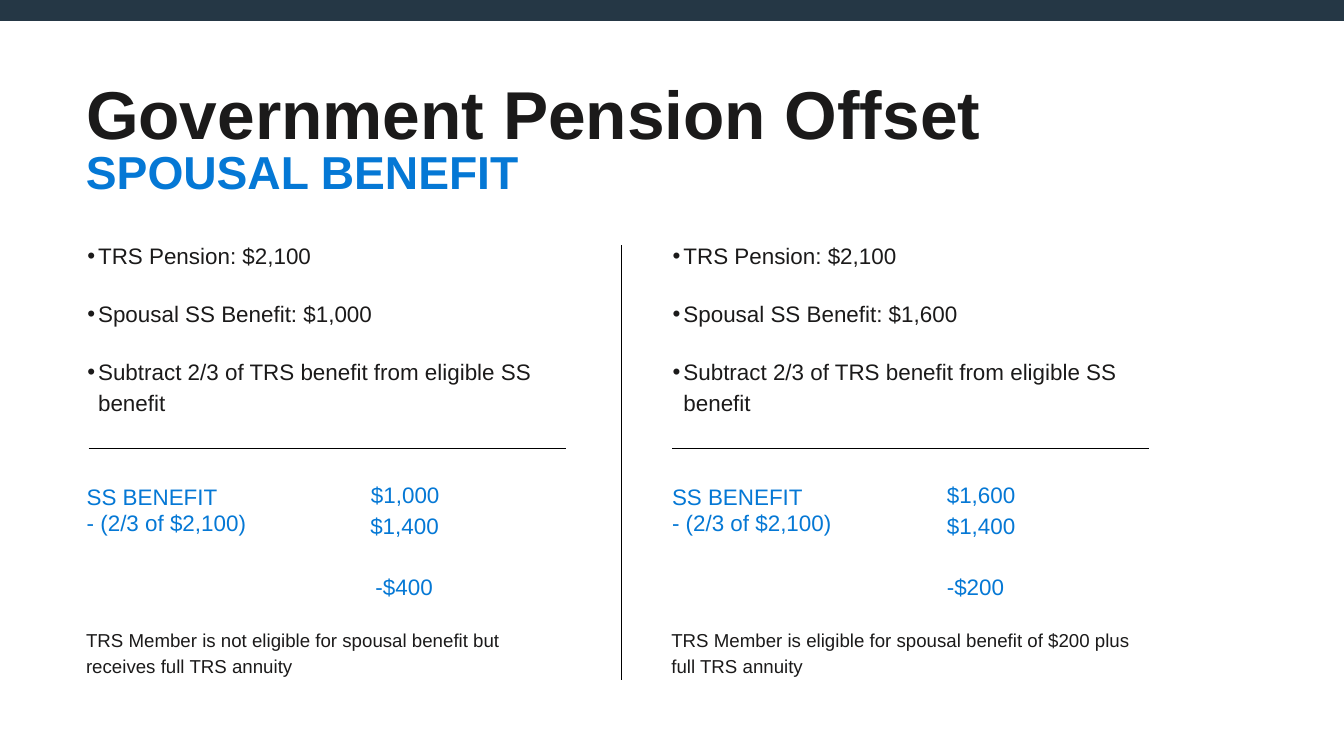
from dataclasses import dataclass
from typing import NamedTuple

from lxml import etree
from pptx import Presentation
from pptx import util as u
from pptx.dml.color import RGBColor
from pptx.enum import shapes, text
from pptx.oxml.ns import qn

EMU_PER_PX = 9144  # 100 px to the inch


def px(length: int) -> u.Emu:
    return u.Emu(length * EMU_PER_PX)


@dataclass(frozen=True)
class Theme:
    font: str = "Arial"
    ink: RGBColor = RGBColor(0x1B, 0x1A, 0x1A)
    accent: RGBColor = RGBColor(0x05, 0x78, 0xD5)
    rule: RGBColor = RGBColor(0, 0, 0)
    bar: RGBColor = RGBColor(0x25, 0x37, 0x45)
    title: float = 72.5
    subtitle: float = 49.5
    body: float = 24
    note: float = 20


class Box(NamedTuple):
    left: int
    top: int
    width: int
    height: int


class Amount(NamedTuple):
    text: str
    right_margin: int
    top_margin: int
    spacing: float


@dataclass(frozen=True)
class Case:
    left: int
    rule_left: int
    benefit: str
    result: str
    note: str
    note_width: int
    amounts_right: bool


THEME = Theme()
CASES = [
    Case(128, 132, "$1,000", "-$400",
         "TRS Member is not eligible for spousal benefit but receives full TRS annuity",
         692, True),
    Case(999, 1000, "$1,600", "-$200",
         "TRS Member is eligible for spousal benefit of $200 plus full TRS annuity",
         702, False),
]


def format_paragraph(paragraph, size: float, color: RGBColor, bold: bool = False,
                     spacing: float = 1.0, before: float = 0) -> None:
    paragraph.alignment = text.PP_ALIGN.LEFT
    paragraph.line_spacing = spacing
    paragraph.space_before = u.Pt(before)
    for run in paragraph.runs:
        run.font.name = THEME.font
        run.font.size = u.Pt(size)
        run.font.bold = bold
        run.font.color.rgb = color


def place_text(shape, box: Box, content: str, top_margin: int = 1):
    """Move a text shape, clear its insets and return its text frame."""
    shape.left, shape.top, shape.width, shape.height = map(px, box)
    frame = shape.text_frame
    frame.text = content
    frame.word_wrap = True
    frame.auto_size = text.MSO_AUTO_SIZE.NONE
    frame.vertical_anchor = text.MSO_ANCHOR.TOP
    frame.margin_left = frame.margin_right = frame.margin_bottom = 0
    frame.margin_top = px(top_margin)
    return frame


def add_label(slide, box: Box, content: str, size: float, color: RGBColor,
              bold: bool = False, spacing: float = 1.0) -> None:
    shape = slide.shapes.add_textbox(*map(px, box))
    frame = place_text(shape, box, content)
    format_paragraph(frame.paragraphs[0], size, color, bold, spacing)


def add_rule(slide, x1: int, y1: int, x2: int, y2: int) -> None:
    line = slide.shapes.add_connector(shapes.MSO_CONNECTOR.STRAIGHT,
                                      *map(px, (x1, y1, x2, y2)))
    line.line.color.rgb = THEME.rule
    line.line.width = u.Pt(0.75)
    etree.SubElement(line._element.spPr, qn("a:effectLst"))


def fill_bullets(placeholder, case: Case) -> None:
    items = ["TRS Pension: $2,100", f"Spousal SS Benefit: {case.benefit}",
             "Subtract 2/3 of TRS benefit from eligible SS benefit"]
    frame = place_text(placeholder, Box(case.left, 359, 705, 259), "\n".join(items))
    layout = [(1.0, 0), (1.0, 33.5), (1.15, 29.5)]
    for paragraph, (spacing, before) in zip(frame.paragraphs, layout):
        format_paragraph(paragraph, THEME.body, THEME.ink, spacing=spacing, before=before)
        properties = paragraph._p.get_or_add_pPr()
        properties.set("marL", str(px(18)))
        properties.set("indent", str(-px(16)))
        etree.SubElement(properties, qn("a:buChar")).set("char", "•")


def fill_cell(cell, content: str, spacing: float, left: int = 0, right: int = 0,
              top: int = 0) -> None:
    cell.text = content
    cell.margin_left, cell.margin_right = px(left), px(right)
    cell.margin_top, cell.margin_bottom = px(top), 0
    format_paragraph(cell.text_frame.paragraphs[0], THEME.body, THEME.accent,
                     spacing=spacing)


def add_calculation(slide, case: Case) -> None:
    columns, rows = (347, 184), (41, 69, 61)
    table = slide.shapes.add_table(3, 2, px(case.left - 2), px(719),
                                   px(sum(columns)), px(sum(rows))).table
    table.first_row = table.horz_banding = False
    for column, width in zip(table.columns, columns):
        column.width = px(width)
    for row, height in zip(table.rows, rows):
        row.height = px(height)
    for cell in table.iter_cells():
        cell.fill.background()

    fill_cell(table.cell(0, 0), "SS BENEFIT", 1.1, left=3)
    fill_cell(table.cell(1, 0), "- (2/3 of $2,100)", 1.0, left=3, top=1)
    amounts = [Amount(case.benefit, 3, 0, 1.0), Amount("$1,400", 4, 0, 1.14),
               Amount(case.result, 13, 21, 1.16)]
    for index, amount in enumerate(amounts):
        cell = table.cell(index, 1)
        if case.amounts_right:
            fill_cell(cell, amount.text, amount.spacing, right=amount.right_margin,
                      top=amount.top_margin)
            cell.text_frame.paragraphs[0].alignment = text.PP_ALIGN.RIGHT
        else:
            fill_cell(cell, amount.text, amount.spacing, left=65, top=amount.top_margin)


def main() -> None:
    presentation = Presentation()
    presentation.slide_width, presentation.slide_height = px(2000), px(1125)
    slide = presentation.slides.add_slide(presentation.slide_layouts[3])
    title, *bodies = slide.placeholders

    # Heading
    frame = place_text(title, Box(128, 105, 1411, 124), "Government Pension Offset", 2)
    format_paragraph(frame.paragraphs[0], THEME.title, THEME.ink, bold=True)
    add_label(slide, Box(128, 212, 677, 86), "SPOUSAL BENEFIT", THEME.subtitle,
              THEME.accent, bold=True)

    # Two worked cases
    for body, case in zip(bodies, CASES):
        fill_bullets(body, case)
        add_rule(slide, case.rule_left, 667, case.rule_left + 710, 667)
        add_calculation(slide, case)
        add_label(slide, Box(case.left, 930, case.note_width, 80), case.note,
                  THEME.note, THEME.ink, spacing=1.16)

    # Divider and top bar
    add_rule(slide, 925, 365, 925, 1012)
    bar = slide.shapes.add_shape(shapes.MSO_SHAPE.RECTANGLE,
                                 *map(px, Box(0, 0, 2000, 31)))
    bar.shadow.inherit = False
    bar.fill.solid()
    bar.fill.fore_color.rgb = THEME.bar
    bar.line.fill.background()

    presentation.save("out.pptx")


if __name__ == "__main__":
    main()
